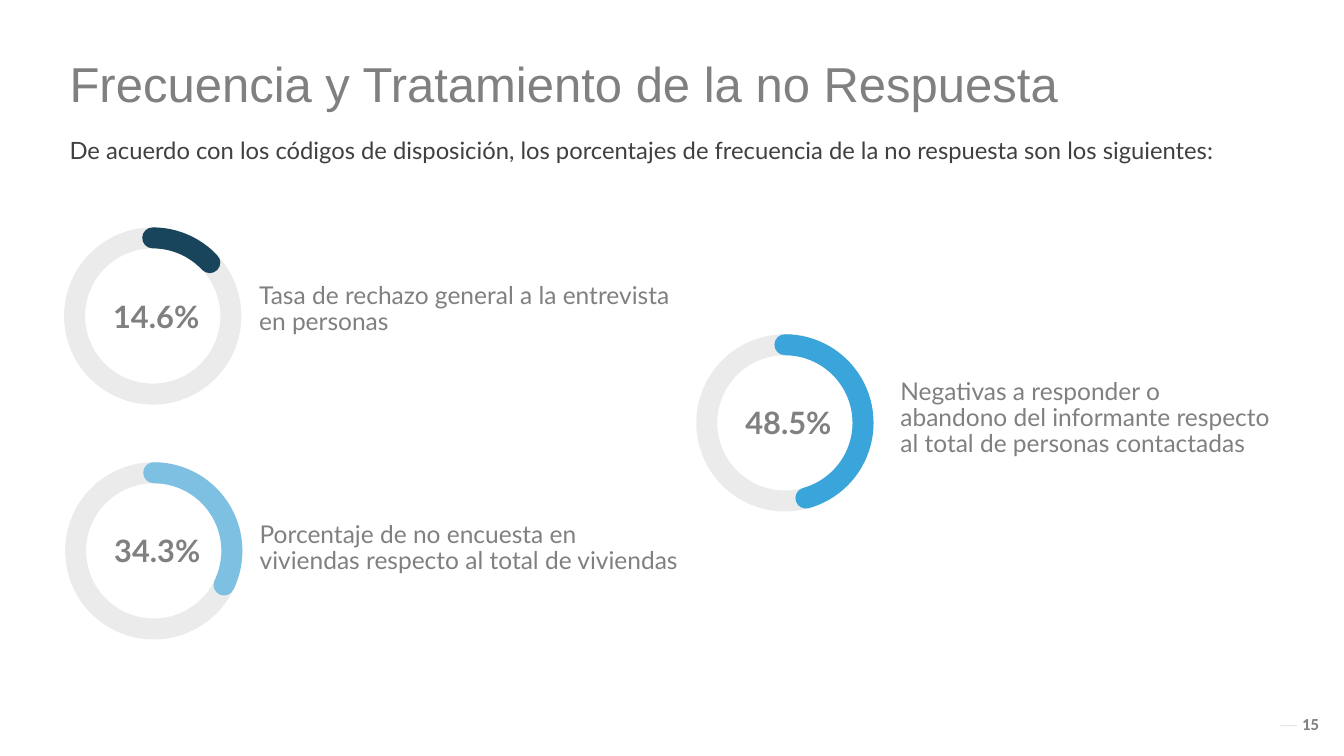
import pptx
import pptx.util
from lxml import etree
from pptx.dml.color import RGBColor
from pptx.enum.shapes import MSO_CONNECTOR, MSO_SHAPE
from pptx.enum.text import MSO_ANCHOR, PP_ALIGN
from pptx.oxml.ns import qn

PX = 9144  # EMU per px, 100 px to the inch
GREY = "808080"
RING = 310  # ring diameter


def add_text(text, x, y, w, h, size, font="Lato", color=GREY, bold=False, align=PP_ALIGN.LEFT,
             anchor=MSO_ANCHOR.TOP, insets=(0, 0, 0, 0), spacing=None, before=0):
    """Insets run left, top, right, bottom; spacing is a factor or a length."""
    tf = s.shapes.add_textbox(x * PX, y * PX, w * PX, h * PX).text_frame
    tf.word_wrap = True
    tf.vertical_anchor = anchor
    tf.margin_left, tf.margin_top, tf.margin_right, tf.margin_bottom = [i * PX for i in insets]
    p = tf.paragraphs[0]
    p.alignment = align
    p.line_spacing = spacing
    p.space_before = pptx.util.Pt(before)
    r = p.add_run()
    r.text = text
    r.font.name = font
    r.font.size = pptx.util.Pt(size)
    r.font.bold = bold
    r.font.color.rgb = RGBColor.from_string(color)


def set_line(sp, color, width, alpha=None, cap="flat"):
    sp.line.color.rgb = RGBColor.from_string(color)
    sp.line.width = pptx.util.Pt(width)
    ln = sp.line._get_or_add_ln()
    ln.set("cap", cap)
    if alpha is not None:
        etree.SubElement(ln.find(".//" + qn("a:srgbClr")), qn("a:alpha"), val=str(alpha * 1000))


prs = pptx.Presentation()
prs.slide_width = 2666 * PX
prs.slide_height = 1500 * PX
s = prs.slides.add_slide(prs.slide_layouts[6])

add_text("Frecuencia y Tratamiento de la no Respuesta", 138, 109, 2025, 105, 70, font="Arial",
         insets=(0, 10, 20, 10), spacing=0.9, before=20)
add_text("De acuerdo con los códigos de disposición, los porcentajes de frecuencia "
         "de la no respuesta son los siguientes:", 138, 254, 2347, 146, 34, color="404040",
         insets=(0, 21, 21, 21), spacing=pptx.util.Pt(36.4), before=7.5)

# ring left and top, arc sweep in degrees, colour, value, label, label box
rings = [
    (148, 472, 46.9, "18455C", "14.6%",
     "Tasa de rechazo general a la entrevista en personas", (514, 556, 834, 117)),
    (150, 938, 115.9, "7EC0E1", "34.3%",
     "Porcentaje de no encuesta en viviendas respecto al total de viviendas",
     (515, 959, 834, 258)),
    (1402, 684, 164.4, "39A5DB", "48.5%",
     "Negativas a responder o abandono del informante respecto al total de personas contactadas",
     (1786, 711, 738, 239)),
]
for x, y, sweep, color, value, label, box in rings:
    add_text(label, *box, 35, anchor=MSO_ANCHOR.MIDDLE, spacing=pptx.util.Pt(37.3), before=7.5)
    add_text(value, x + 15, y + 105, 294, 100, 44, bold=True, align=PP_ALIGN.CENTER,
             insets=(27, 13, 27, 13))
    for kind in (MSO_SHAPE.OVAL, MSO_SHAPE.ARC):
        sp = s.shapes.add_shape(kind, x * PX, y * PX, RING * PX, RING * PX)
        sp.shadow.inherit = False
        sp.fill.background()
        if kind == MSO_SHAPE.OVAL:
            set_line(sp, "BFBFBF", 30, alpha=30)
        else:
            set_line(sp, color, 30, cap="rnd")
            # One degree is 60000 angle units, and an adjustment of 1 is 100000
            sp.adjustments[0] = 270 * 0.6
            sp.adjustments[1] = (270 + sweep) % 360 * 0.6

dash = s.shapes.add_connector(MSO_CONNECTOR.STRAIGHT, 2540 * PX, 1440 * PX, 2573 * PX, 1440 * PX)
set_line(dash, "404040", 1, alpha=20)
etree.SubElement(dash._element.spPr, qn("a:effectLst"))
add_text("15", 2573, 1409, 65, 54, 24, font="Calibri", bold=True, anchor=MSO_ANCHOR.MIDDLE,
         insets=(10, 5, 10, 5))

prs.save("out.pptx")
